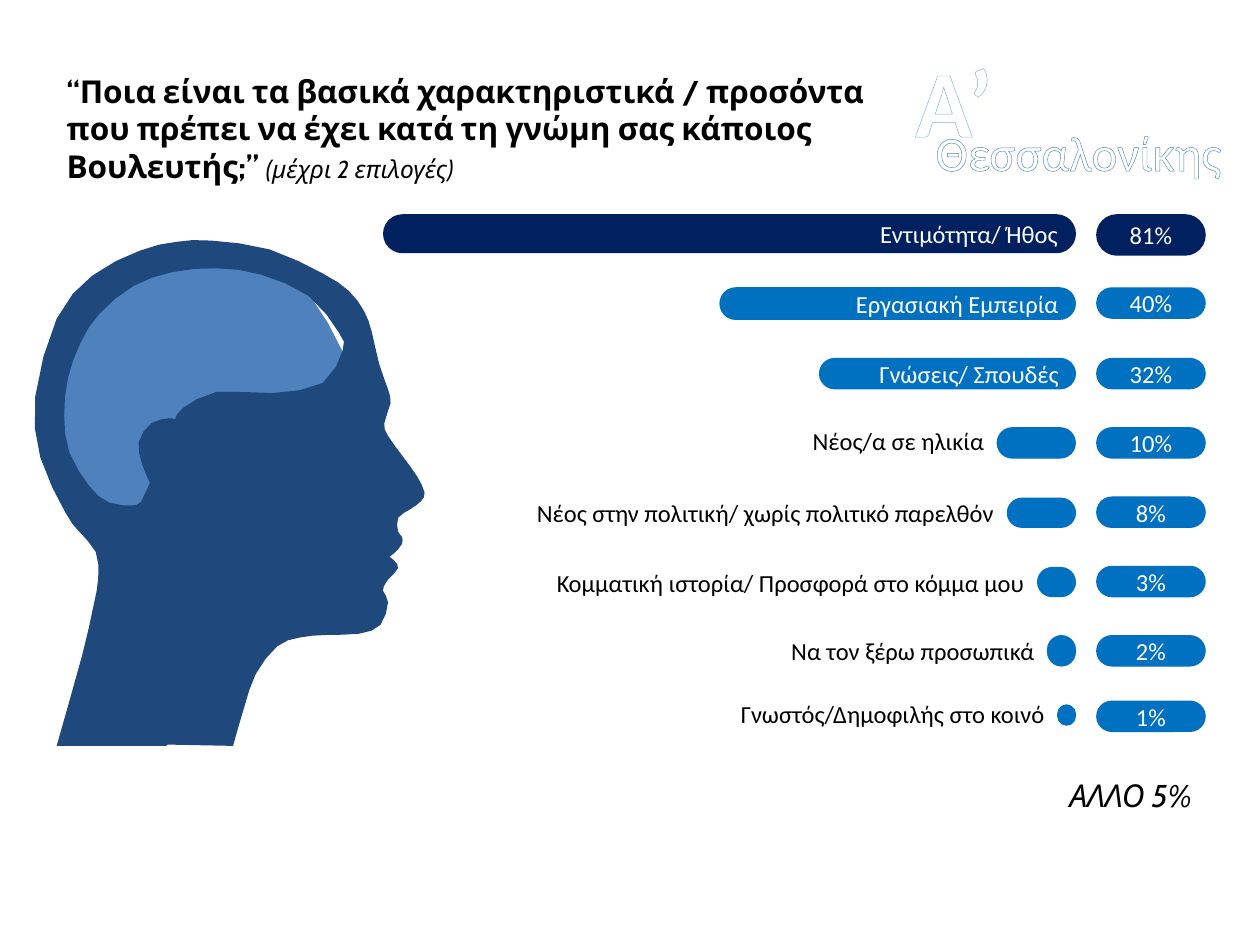
"""Build a survey slide: qualities voters seek in a member of parliament."""
from lxml.etree import SubElement
from pptx import Presentation
from pptx.dml.color import RGBColor
from pptx.enum.shapes import MSO_SHAPE
from pptx.enum.text import MSO_ANCHOR, MSO_AUTO_SIZE, PP_ALIGN
from pptx.oxml.ns import qn
from pptx.util import Inches, Pt

NAVY, BLUE, HEAD_BLUE, BRAIN_BLUE = "002060", "0070C0", "1F497D", "4F81BD"
BLACK, WHITE = "000000", "FFFFFF"
BAR_RIGHT, BADGE_LEFT, BADGE_WIDTH, LABEL_HEIGHT = 8.54, 8.7, 0.87, 0.34
UNITS_PER_INCH = 1000

TITLE = {"name": "Cabin", "size": Pt(18), "bold": True}
HINT = {"name": "Cabin", "size": Pt(14), "bold": False, "italic": True}
OTHER = {"name": "Cabin", "size": Pt(18), "italic": True}
BODY = {"name": "Calibri", "size": Pt(14)}
REGION_LETTER = {"name": "Calibri", "size": Pt(54), "bold": True}
REGION_NAME = {"name": "Calibri", "size": Pt(28)}

# label, percent, (bar top, width, height), (badge top, height), outside label top
ANSWERS = [
    ("Εντιμότητα/ Ήθος", 81, (1.7, 5.5, 0.31), (1.7, 0.33), None),
    ("Εργασιακή Εμπειρία", 40, (2.28, 2.83, 0.26), (2.28, 0.25), None),
    ("Γνώσεις/ Σπουδές", 32, (2.84, 2.04, 0.25), (2.84, 0.25), None),
    ("Νέος/α σε ηλικία", 10, (3.39, 0.63, 0.25), (3.39, 0.25), 3.33),
    ("Νέος στην πολιτική/ χωρίς πολιτικό παρελθόν", 8, (3.95, 0.55, 0.24), (3.94, 0.25), 3.9),
    ("Κομματική ιστορία/ Προσφορά στο κόμμα μου", 3, (4.5, 0.31, 0.24), (4.49, 0.25), 4.46),
    ("Να τον ξέρω προσωπικά", 2, (5.04, 0.23, 0.25), (5.04, 0.25), 5),
    ("Γνωστός/Δημοφιλής στο κοινό", 1, (5.59, 0.15, 0.17), (5.56, 0.25), 5.5),
]
LABEL_WIDTHS = {10: 1.57, 8: 3.86, 3: 3.95, 2: 2.15, 1: 2.63}

BRAIN = [
    [(2.34, 2.16), (1.42, 2.05), (0.46, 2.61)],
    [(0.46, 2.61), (0.35, 3.31), (0.49, 4)],
    [(0.49, 4), (3.01, 4.18)],
    [(3.01, 4.18), (2.88, 3.1), (2.34, 2.16)],
]
BRAIN_OPENING = [
    [(1.39, 3.33), (1.45, 3.24), (1.72, 3.11), (2.17, 3.12), (2.56, 3.04), (2.72, 2.78),
     (2.69, 2.64), (2.45, 2.35), (2.07, 2.18), (1.72, 2.13), (1.37, 2.16), (1.06, 2.27),
     (0.79, 2.49), (0.64, 2.72), (0.54, 3), (0.51, 3.3), (0.55, 3.59), (0.71, 3.86),
     (0.87, 3.99), (1.08, 4.01), (1.14, 3.94), (1.19, 3.83)],
    [(1.19, 3.83), (1.13, 3.69), (1.1, 3.51), (1.2, 3.36), (1.34, 3.32), (1.39, 3.33)],
]
HEAD = [
    [(0.45, 5.92), (0.65, 5.21), (0.74, 4.82), (0.78, 4.59), (0.76, 4.38), (0.62, 4.21),
     (0.52, 4.07), (0.32, 3.63), (0.28, 3.15), (0.45, 2.53), (0.73, 2.19), (1.11, 1.99),
     (1.4, 1.92), (1.68, 1.91), (2.14, 1.98), (2.56, 2.17), (2.77, 2.31), (2.89, 2.47),
     (2.95, 2.63), (3.01, 2.89), (3.08, 3.09), (3.1, 3.2), (3.05, 3.36), (3.08, 3.46),
     (3.21, 3.64), (3.31, 3.78), (3.37, 3.91), (3.34, 3.98), (3.26, 4.04), (3.16, 4.11),
     (3.16, 4.22), (3.19, 4.26), (3.19, 4.32), (3.13, 4.39), (3.09, 4.42)],
    [(3.09, 4.42), (3.13, 4.45), (3.16, 4.51), (3.09, 4.59), (3.06, 4.63), (3.04, 4.69),
     (3.08, 4.78), (3.02, 4.96), (2.85, 5.03), (2.59, 5.04), (2.38, 5.06), (2.2, 5.13),
     (2.03, 5.35), (1.94, 5.61), (1.85, 5.92)],
    [(1.85, 5.92), (1.33, 5.91)],
    [(1.33, 5.91), (1.32, 5.92)],
    [(1.32, 5.92), (0.45, 5.92)],
]


def color(value):
    return RGBColor.from_string(value)


def smooth_outline(runs, steps=2):
    """Return points on a curve through each run, with corners between runs."""
    outline = [runs[0][0]]
    for run in runs:
        padded = [run[0], *run, run[-1]]
        for before, start, end, after in zip(padded, padded[1:], padded[2:], padded[3:]):
            for step in range(1, steps + 1):
                t = step / steps
                outline.append(tuple(
                    b + t * (c - a) / 2 + t * t * (2 * a - 5 * b + 4 * c - d) / 2
                    + t ** 3 * (3 * b - a - 3 * c + d) / 2
                    for a, b, c, d in zip(before, start, end, after)))
    return [(x * UNITS_PER_INCH, y * UNITS_PER_INCH) for x, y in outline]


def add_silhouette(shapes, contours, fill):
    outlines = [smooth_outline(runs) for runs in contours]
    builder = shapes.build_freeform(*outlines[0][0], scale=Inches(1) / UNITS_PER_INCH)
    for index, outline in enumerate(outlines):
        if index:
            builder.move_to(*outline[0])
        builder.add_line_segments(outline[1:], close=True)
    finish_shape(builder.convert_to_shape(), fill)


def finish_shape(shape, fill):
    shape.shadow.inherit = False
    shape.fill.solid()
    shape.fill.fore_color.rgb = color(fill)
    shape.line.fill.background()


def add_run(paragraph, text, font_format, font_color, outline=None):
    run = paragraph.add_run()
    run.text = text
    for name, value in font_format.items():
        setattr(run.font, name, value)
    run.font.color.rgb = color(font_color)
    if outline:
        line_color, width = outline
        properties = run._r.get_or_add_rPr()
        line = SubElement(properties, qn("a:ln"), w=str(Pt(width)))
        fill = SubElement(line, qn("a:solidFill"))
        SubElement(fill, qn("a:srgbClr"), val=line_color)
        properties.insert(0, line)


def add_pill(slide, box, fill, text="", alignment=PP_ALIGN.CENTER):
    shape = slide.shapes.add_shape(MSO_SHAPE.ROUNDED_RECTANGLE, *map(Inches, box))
    shape.adjustments[0] = 0.5
    finish_shape(shape, fill)
    if text:
        shape.text_frame.vertical_anchor = MSO_ANCHOR.MIDDLE
        paragraph = shape.text_frame.paragraphs[0]
        paragraph.alignment = alignment
        add_run(paragraph, text, BODY, WHITE)


def add_text(slide, box, runs, alignment=PP_ALIGN.LEFT, wrap=False, font_color=BLACK, outline=None):
    frame = slide.shapes.add_textbox(*map(Inches, box)).text_frame
    frame.word_wrap = wrap
    frame.auto_size = MSO_AUTO_SIZE.SHAPE_TO_FIT_TEXT
    paragraph = frame.paragraphs[0]
    paragraph.alignment = alignment
    for text, font_format in runs:
        add_run(paragraph, text, font_format, font_color, outline)


def add_answer(slide, answer):
    label, percent, (top, width, height), (badge_top, badge_height), label_top = answer
    fill = NAVY if percent == 81 else BLUE
    left = BAR_RIGHT - width
    inside = label_top is None
    add_pill(slide, (left, top, width, height), fill, label if inside else "", PP_ALIGN.RIGHT)
    add_pill(slide, (BADGE_LEFT, badge_top, BADGE_WIDTH, badge_height), fill, f"{percent}%")
    if not inside:
        label_width = LABEL_WIDTHS[percent]
        box = (left - label_width, label_top, label_width, LABEL_HEIGHT)
        add_text(slide, box, [(label, BODY)], PP_ALIGN.RIGHT)


def main():
    presentation = Presentation()
    presentation.slide_width, presentation.slide_height = Inches(10), Inches(7.5)
    slide = presentation.slides.add_slide(presentation.slide_layouts[6])
    add_text(slide, (0.43, 0.52, 7.05, 0.94), [
        ("“Ποια είναι τα βασικά χαρακτηριστικά / προσόντα που πρέπει να έχει "
         "κατά τη γνώμη σας κάποιος Βουλευτής;” ", TITLE),
        ("(μέχρι 2 επιλογές)", HINT),
    ], wrap=True)
    group = slide.shapes.add_group_shape()
    add_silhouette(group.shapes, [BRAIN], BRAIN_BLUE)
    add_silhouette(group.shapes, [BRAIN_OPENING, HEAD], HEAD_BLUE)
    for answer in ANSWERS:
        add_answer(slide, answer)
    add_text(slide, (8.39, 6.11, 1.18, 0.4), [("ΑΛΛΟ 5%", OTHER)])
    add_text(slide, (7.15, 0.29, 0.84, 1.01), [("A’", REGION_LETTER)],
             PP_ALIGN.CENTER, font_color=WHITE, outline=("7EA6EA", 2.48))
    add_text(slide, (7.31, 0.92, 2.5, 0.57), [("Θεσσαλονίκης", REGION_NAME)],
             PP_ALIGN.CENTER, font_color=WHITE, outline=(BRAIN_BLUE, 0.8))
    presentation.save("out.pptx")


if __name__ == "__main__":
    main()
